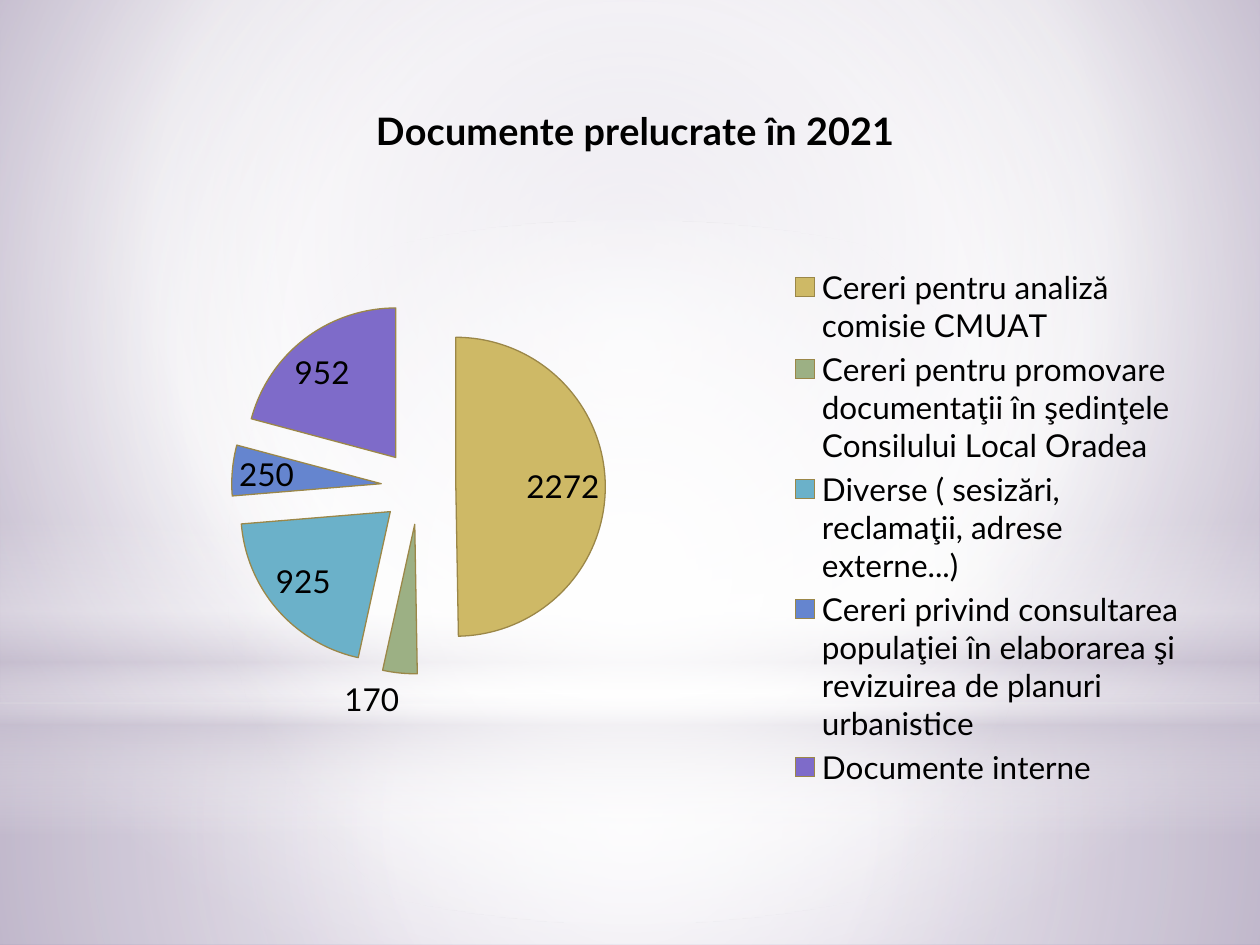
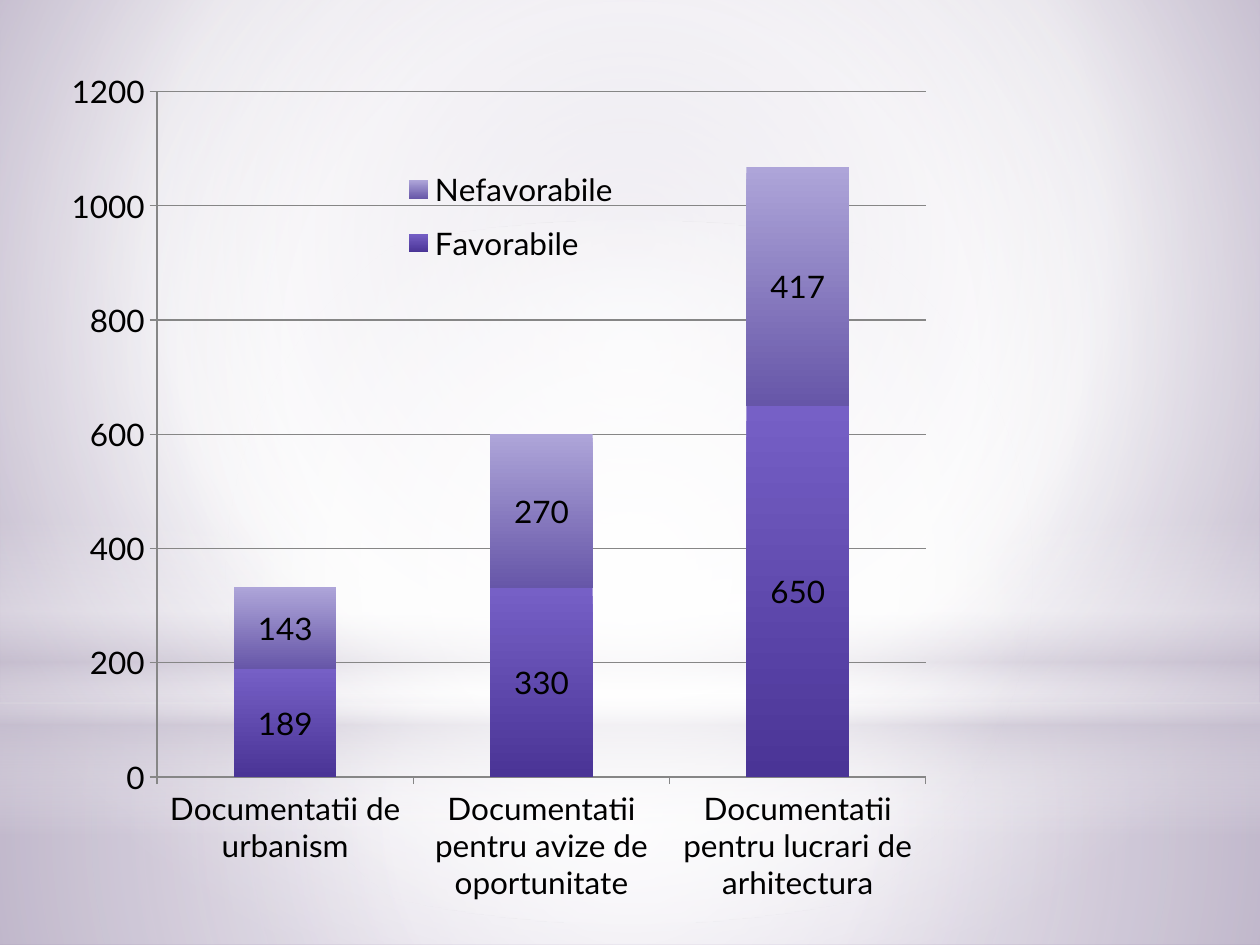
"""Build two chart slides on a shared soft violet master."""
from pptx import Presentation
from pptx.chart.data import CategoryChartData
from pptx.dml.color import RGBColor
from pptx.enum.chart import XL_CHART_TYPE, XL_LABEL_POSITION, XL_LEGEND_POSITION, XL_TICK_MARK
from pptx.enum.shapes import MSO_SHAPE
from pptx.oxml import parse_xml
from pptx.oxml.ns import nsdecls
from pptx.util import Inches, Pt

rgb = RGBColor.from_string
FONT, INK, WHITE, MIST = "Lato", "000000", "FFFFFF", "C9C2D1"
GOLD, GREY = "9B8748", "868686"
MID = (50, 50, 50, 50)


def paint(item, stops, focus):
    """Fill with a gradient: radial around focus, or downward without one."""
    item_fill = item.background.fill if hasattr(item, "background") else item.fill
    item_fill.solid()
    marks = "".join(
        f'<a:gs pos="{pos * 1000}"><a:srgbClr val="{tone}"><a:alpha val="{seen * 1000}"/>'
        f"</a:srgbClr></a:gs>" for pos, tone, seen in stops)
    way = '<a:lin ang="5400000" scaled="0"/>'
    if focus:
        rect = " ".join(f'{side}="{part * 1000}"' for side, part in zip("ltrb", focus))
        way = f'<a:path path="circle"><a:fillToRect {rect}/></a:path>'
    old = item.element.xpath(".//a:solidFill")[0]
    old.getparent().replace(old, parse_xml(
        f'<a:gradFill {nsdecls("a")} rotWithShape="1"><a:gsLst>{marks}</a:gsLst>{way}</a:gradFill>'))


def seat(node, index, spot, inner=False):
    """Place a chart part by shares of the chart's size."""
    for old in node.xpath("./c:layout"):
        node.remove(old)
    aim = '<c:layoutTarget val="inner"/>' if inner else ""
    aim += '<c:xMode val="edge"/><c:yMode val="edge"/>'
    aim += "".join(f'<c:{key} val="{part}"/>' for key, part in zip("xywh", spot))
    node.insert(index, parse_xml(
        f'<c:layout {nsdecls("c")}><c:manualLayout>{aim}</c:manualLayout></c:layout>'))


deck = Presentation()
deck.slide_width, deck.slide_height = Inches(10), Inches(7.5)
W, H = deck.slide_width, deck.slide_height
first, second = [deck.slides.add_slide(deck.slide_layouts[6]) for _ in range(2)]

master = deck.slide_master
paint(master, [(0, "C1B7CD", 100), (60, WHITE, 100), (100, "A191B5", 100)], (20, 10, 20, 60))
bands = [
    (MSO_SHAPE.RECTANGLE, 0.744, 0.256, [(0, WHITE, 91), (37, WHITE, 76), (100, MIST, 79)], MID),
    (MSO_SHAPE.RECTANGLE, 0, 0.744, [(0, WHITE, 89), (48, WHITE, 62), (100, MIST, 79)], MID),
    (MSO_SHAPE.RECTANGLE, 0.55, 0.333, [(0, WHITE, 0), (29, WHITE, 30), (45, MIST, 40),
                                        (55, WHITE, 26), (65, MIST, 60), (100, WHITE, 0)], None),
    (MSO_SHAPE.OVAL, 0.233, 0.744, [(0, WHITE, 100), (56, WHITE, 0)], MID),
]
for i, (kind, top, tall, stops, focus) in enumerate(bands):
    band = first.shapes.add_shape(kind, 0, int(H * top), W, int(H * tall))
    band.shadow.inherit = False
    band.line.fill.background()
    paint(band, stops, focus)
    band.element.nvSpPr.cNvPr.id = 20 + i
    master.element.cSld.spTree.insert(2 + i, band.element)

pie_data = CategoryChartData()
pie_data.categories = [
    "Cereri pentru analiză comisie CMUAT",
    "Cereri pentru promovare documentaţii în şedinţele Consilului Local Oradea",
    "Diverse ( sesizări, reclamaţii, adrese externe...)",
    "Cereri privind consultarea populaţiei în elaborarea şi revizuirea de planuri urbanistice",
    "Documente interne",
]
pie_data.add_series("Series 1", (2272, 170, 925, 250, 952))
bar_data = CategoryChartData()
bar_data.categories = [
    "Documentatii de urbanism",
    "Documentatii pentru avize de oportunitate",
    "Documentatii pentru lucrari de arhitectura",
]
bar_data.add_series("Favorabile", (189, 330, 650))
bar_data.add_series("Nefavorabile", (143, 270, 417))

specs = [
    (first, XL_CHART_TYPE.PIE, pie_data, 0.067, (0.063, 0.286, 0.501, 0.451),
     (0.64, 0.24, 0.35, 0.64)),
    (second, XL_CHART_TYPE.COLUMN_STACKED, bar_data, 0.077, (0.083, 0.022, 0.678, 0.84),
     (0.27, 0.1, 0.25, 0.15)),
]
charts = []
for slide, kind, data, top, area, key in specs:
    chart = slide.shapes.add_chart(
        kind, int(W * 0.05), int(H * top), int(W * 0.9), int(H * 0.877), data).chart
    chart.font.name, chart.font.size = FONT, Pt(18)
    chart.font.color.rgb = rgb(INK)
    chart.has_title = False
    chart.has_legend = True
    chart.legend.position = XL_LEGEND_POSITION.RIGHT
    chart.legend.include_in_layout = True
    seat(chart.element.xpath(".//c:legend")[0], 1, key)
    seat(chart.element.xpath(".//c:plotArea")[0], 0, area, True)
    plot = chart.plots[0]
    plot.has_data_labels = True
    plot.data_labels.show_value = True
    plot.data_labels.show_percentage = False
    charts.append(chart)
pie, bars = charts

pie.has_title = True
head = pie.chart_title.text_frame.paragraphs[0]
head.text = "Documente prelucrate în 2021"
head.font.name, head.font.size, head.font.bold = FONT, Pt(21.6), True
head.font.color.rgb = rgb(INK)
pie.chart_title.include_in_layout = True
seat(pie.element.xpath(".//c:title")[0], 1, (0.27, 0.04))
pie.plots[0].vary_by_categories = True
pie.plots[0].data_labels.position = XL_LABEL_POSITION.BEST_FIT
wheel = pie.plots[0].series[0]
wheel.format.line.color.rgb = rgb(GOLD)
pie.element.xpath(".//c:ser/c:spPr")[0].addnext(
    parse_xml(f'<c:explosion {nsdecls("c")} val="25"/>'))
for i, tone in enumerate(("CEB966", "9CB084", "6BB1C9", "6585CF", "7E6BC9")):
    slice_ = wheel.points[i].format
    slice_.fill.solid()
    slice_.fill.fore_color.rgb = rgb(tone)
    slice_.line.color.rgb = rgb(GOLD)
    slice_.line.width = Pt(0.75)

stack = bars.plots[0]
stack.gap_width, stack.overlap, stack.vary_by_categories = 150, 100, False
for row, tones in zip(stack.series, (("7660C6", "4A3496"), ("AEA5D9", "6656A8"))):
    fill = row.format.fill
    fill.gradient()
    fill.gradient_angle = 270
    for stop, tone in zip(fill.gradient_stops, tones):
        stop.color.rgb = rgb(tone)
for axis in (bars.category_axis, bars.value_axis):
    axis.major_tick_mark = XL_TICK_MARK.OUTSIDE
    axis.minor_tick_mark = XL_TICK_MARK.NONE
    axis.format.line.color.rgb = rgb(GREY)
scale = bars.value_axis
scale.minimum_scale, scale.maximum_scale, scale.major_unit = 0, 1200, 200
scale.has_major_gridlines = True
scale.major_gridlines.format.line.color.rgb = rgb(GREY)

deck.save("out.pptx")
